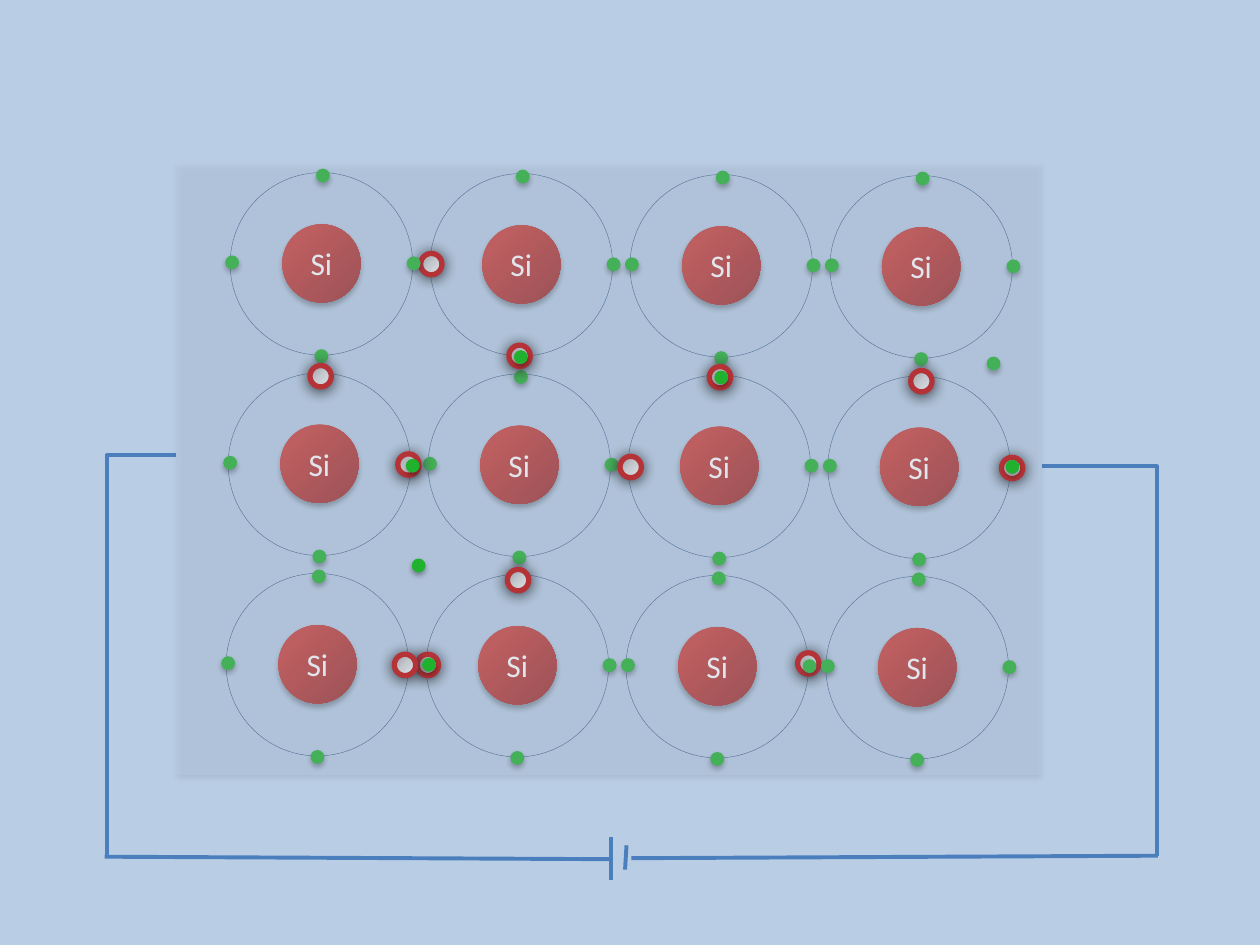
from dataclasses import dataclass
from itertools import product

from lxml.etree import SubElement
from pptx import Presentation
from pptx.dml.color import RGBColor
from pptx.enum.shapes import MSO_CONNECTOR, MSO_SHAPE
from pptx.enum.text import MSO_ANCHOR, PP_ALIGN
from pptx.oxml import parse_xml
from pptx.oxml.ns import nsdecls, qn
from pptx.util import Cm, Pt


@dataclass(frozen=True)
class Theme:
    """Colours, shadows (alpha, blur, distance) and type of the slide."""
    back: str = "B9CDE5"
    panel: str = "C6D9F1"
    orbit: str = "3A5F8C"
    electron: str = "20B22E"
    ring: str = "C00000"
    wire: str = "4B7EBC"
    label: str = "FFFFFF"
    nucleus: tuple = ((0, "9C2F2D"), (80, "CB3E3A"), (100, "CE3B37"))
    hole: tuple = ((0, "979797"), (50, "D7D7D7"), (100, "FFFFFF"))
    soft: tuple = (35, 3.1, 1.8)
    nucleus_shadow: tuple = (32, 3.5, 2.2)
    hole_shadow: tuple = (100, 8.5, 1)
    font: str = "Calibri"
    size: float = 18


T = Theme()
RADIAL = '<a:path path="circle"><a:fillToRect l="100000" t="100000"/></a:path>'
LINEAR = '<a:lin ang="2700000" scaled="0"/>'
PANEL = (3.58, 3.28, 17.4, 12.34)
CIRCUIT = (2.11, 9.17)
ORBIT, NUCLEUS, ELECTRON, HOLE = 3.68, 1.58, 0.28, 0.43
SEATS = {"T": (1.73, -0.08), "B": (1.7, 3.56), "L": (-0.1, 1.67), "R": (3.56, 1.69)}
BONDS = (("TBLR", "TR", "TBLR", "TBLR"),
         ("BL", "TBLR", "BR", "BL"),
         ("TBL", "BR", "TBLR", "TBLR"))
BACK_HOLES = ((4.83, 9.91), (12.5, 9.88), (4.9, 1.83))
FRONT_HOLES = ((4.37, 9.91), (14.78, 4.19), (8.92, 5.92), (6.65, 8.2), (2.67, 4.09),
               (6.68, 3.68), (10.72, 4.11), (16.61, 5.94), (4.44, 5.87))
LOOSE_ELECTRON = (16.31, 3.91)
FREE_ELECTRONS = ((4.93, 9.98), (6.78, 3.78), (10.82, 4.19),
                  (16.69, 5.99), (4.72, 7.98), (4.6, 5.97))


def rgb(value):
    """Return a colour from its hex code."""
    return RGBColor.from_string(value)


def add_shadow(sp, shadow):
    """Give a shape a downward outer shadow."""
    alpha, blur, dist = shadow
    effects = sp._element.spPr.find(qn("a:effectLst"))
    outer = SubElement(effects, qn("a:outerShdw"), blurRad=str(Pt(blur)), dist=str(Pt(dist)),
                       dir="5400000", rotWithShape="0")
    color = SubElement(outer, qn("a:srgbClr"), val="000000")
    SubElement(color, qn("a:alpha"), val=str(alpha * 1000))


def add_gradient(sp, stops, direction):
    """Fill a shape with gradient stops."""
    gs = "".join(f'<a:gs pos="{pos * 1000}"><a:srgbClr val="{color}"/></a:gs>'
                 for pos, color in stops)
    fill = parse_xml(f'<a:gradFill {nsdecls("a")} rotWithShape="1">'
                     f'<a:gsLst>{gs}</a:gsLst>{direction}</a:gradFill>')
    sp._element.spPr.find(qn("a:prstGeom")).addnext(fill)


def add_shape(s, kind, x, y, w, h, fill=None, line=None, width=0, shadow=None):
    """Add a preset shape with a plain, gradient or empty fill."""
    sp = s.shapes.add_shape(kind, Cm(x), Cm(y), Cm(w), Cm(h))
    sp.shadow.inherit = False
    if fill is None:
        sp.fill.background()
    elif isinstance(fill, str):
        sp.fill.solid()
        sp.fill.fore_color.rgb = rgb(fill)
    else:
        add_gradient(sp, *fill)
    if line:
        sp.line.color.rgb = rgb(line)
        sp.line.width = Pt(width)
    else:
        sp.line.fill.background()
    if shadow:
        add_shadow(sp, shadow)
    return sp


def add_circle(s, x, y, d, **style):
    """Add a circle by its top left corner and diameter."""
    return add_shape(s, MSO_SHAPE.OVAL, x, y, d, d, **style)


def add_nucleus(s, x, y):
    """Add a labelled silicon nucleus."""
    sp = add_circle(s, x, y, NUCLEUS, fill=(T.nucleus, RADIAL), shadow=T.nucleus_shadow)
    tf = sp.text_frame
    tf.word_wrap = False
    tf.vertical_anchor = MSO_ANCHOR.MIDDLE
    p = tf.paragraphs[0]
    p.alignment = PP_ALIGN.CENTER
    r = p.add_run()
    r.text = "Si"
    r.font.name, r.font.size = T.font, Pt(T.size)
    r.font.color.rgb = rgb(T.label)


def add_electrons(s, x, y, places):
    """Add electrons at places relative to a corner."""
    for dx, dy in places:
        add_circle(s, x + dx, y + dy, ELECTRON, fill=T.electron, shadow=T.soft)


def add_holes(s, x, y, places):
    """Add ringed holes at places relative to a corner."""
    for dx, dy in places:
        add_circle(s, x + dx, y + dy, HOLE, fill=(T.hole, LINEAR),
                   line=T.ring, width=3, shadow=T.hole_shadow)


def add_lattice(s, x, y):
    """Add the slightly slanted grid of atoms with its holes."""
    atoms = [(x + 1.06 + 4.03 * c - 0.04 * r, y + 0.2 + 4.04 * r + 0.02 * c, BONDS[r][c])
             for r, c in product(range(3), range(4))]
    for ax, ay, _ in atoms:
        add_circle(s, ax, ay, ORBIT, line=T.orbit, width=0.25)
    add_holes(s, x, y, BACK_HOLES)
    for ax, ay, bonds in atoms:
        add_nucleus(s, ax + 1.05, ay + 1.04)
        add_electrons(s, ax, ay, [SEATS[seat] for seat in bonds])
    add_electrons(s, x, y, [LOOSE_ELECTRON])
    add_holes(s, x, y, FRONT_HOLES)


def add_panel(s, x, y, w, h):
    """Add the translucent crystal panel and the free electrons on it."""
    sp = add_shape(s, MSO_SHAPE.RECTANGLE, x, y, w, h, fill=T.panel, shadow=T.soft)
    color = sp._element.spPr.find(qn("a:solidFill")).find(qn("a:srgbClr"))
    SubElement(color, qn("a:alpha"), val="23000")
    add_electrons(s, x, y, FREE_ELECTRONS)


def add_circuit(s, x, y):
    """Add the wires and the battery as one group."""
    group = s.shapes.add_group_shape()
    straight, elbow = MSO_CONNECTOR.STRAIGHT, MSO_CONNECTOR.ELBOW
    wires = ((elbow, 1.45, 0, 0.05, 8.1),
             (straight, 0, 8.1, 10.19, 8.15),
             (elbow, 18.9, 0.23, 21.21, 8.08),
             (straight, 21.23, 8.08, 10.62, 8.13),
             (straight, 10.21, 7.7, 10.21, 8.56),
             (straight, 10.52, 7.87, 10.49, 8.36))
    for kind, x1, y1, x2, y2 in wires:
        wire = group.shapes.add_connector(kind, Cm(x + x1), Cm(y + y1), Cm(x + x2), Cm(y + y2))
        wire.line.color.rgb = rgb(T.wire)
        wire.line.width = Pt(2.25)
        spPr = wire._element.spPr
        SubElement(spPr, qn("a:effectLst"))
        if kind == elbow:
            spPr.find(qn("a:prstGeom")).set("prst", "bentConnector2")


def main():
    """Build and save the slide."""
    prs = Presentation()
    prs.slide_width, prs.slide_height = Cm(25.4), Cm(19.05)
    s = prs.slides.add_slide(prs.slide_layouts[6])
    s.background.fill.solid()
    s.background.fill.fore_color.rgb = rgb(T.back)
    add_lattice(s, *PANEL[:2])
    add_circuit(s, *CIRCUIT)
    add_panel(s, *PANEL)
    prs.save("out.pptx")


if __name__ == "__main__":
    main()
